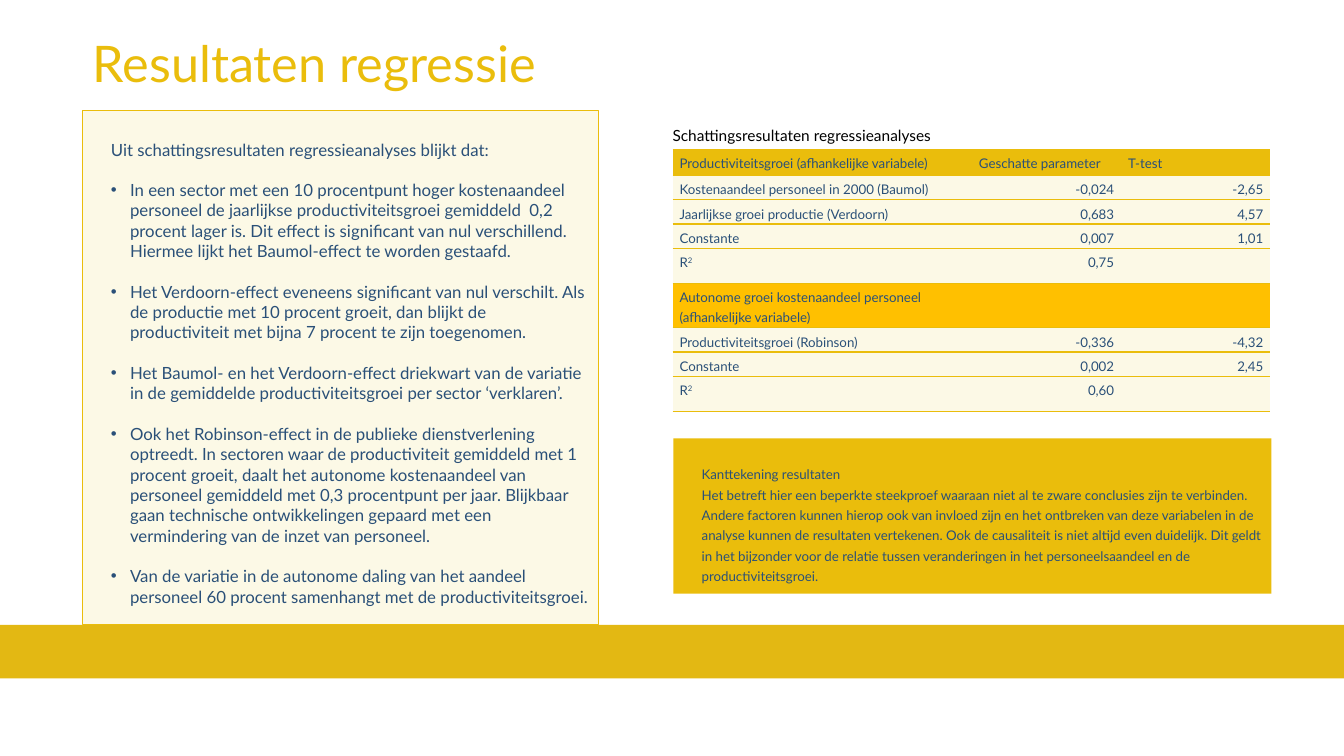
from lxml import etree
from pptx import Presentation
from pptx import util as u
from pptx.dml.color import RGBColor
from pptx.enum import shapes, text
from pptx.oxml.ns import qn

# Content
TITLE = "Resultaten regressie"
INTRO = "Uit schattingsresultaten regressieanalyses blijkt dat:"
FINDINGS = [
    "In een sector met een 10 procentpunt hoger kostenaandeel personeel de jaarlijkse "
    "productiviteitsgroei gemiddeld  0,2 procent lager is. Dit effect is significant van nul "
    "verschillend. Hiermee lijkt het Baumol-effect te worden gestaafd.",
    "Het Verdoorn-effect eveneens significant van nul verschilt. Als de productie met 10 procent "
    "groeit, dan blijkt de productiviteit met bijna 7 procent te zijn toegenomen.",
    "Het Baumol- en het Verdoorn-effect driekwart van de variatie in de gemiddelde "
    "productiviteitsgroei per sector ‘verklaren’.",
    "Ook het Robinson-effect in de publieke dienstverlening optreedt. In sectoren waar de "
    "productiviteit gemiddeld met 1 procent groeit, daalt het autonome kostenaandeel van personeel "
    "gemiddeld met 0,3 procentpunt per jaar. Blijkbaar gaan technische ontwikkelingen gepaard met "
    "een vermindering van de inzet van personeel.",
    "Van de variatie in de autonome daling van het aandeel personeel 60 procent samenhangt met de "
    "productiviteitsgroei.",
]
CAPTION = "Schattingsresultaten regressieanalyses"
# Row kind, then the cells
RESULTS = [
    ("header", "Productiviteitsgroei (afhankelijke variabele)", "Geschatte parameter", "T-test"),
    ("data", "Kostenaandeel personeel in 2000 (Baumol)", "-0,024", "-2,65"),
    ("data", "Jaarlijkse groei productie (Verdoorn)", "0,683", "4,57"),
    ("data", "Constante", "0,007", "1,01"),
    ("data", "R²", "0,75", ""),
    ("group", "Autonome groei kostenaandeel personeel\n(afhankelijke variabele)", "", ""),
    ("data", "Productiviteitsgroei (Robinson)", "-0,336", "-4,32"),
    ("data", "Constante", "0,002", "2,45"),
    ("data", "R²", "0,60", ""),
]
NOTE_HEAD = "Kanttekening resultaten"
NOTE = (
    "Het betreft hier een beperkte steekproef waaraan niet al te zware conclusies zijn te "
    "verbinden. Andere factoren kunnen hierop ook van invloed zijn en het ontbreken van deze "
    "variabelen in de analyse kunnen de resultaten vertekenen. Ook de causaliteit is niet altijd "
    "even duidelijk. Dit geldt in het bijzonder voor de relatie tussen veranderingen in het "
    "personeelsaandeel en de productiviteitsgroei."
)


class Theme:
    font = "Lato"
    gold, band, cream, amber = "EABD0C", "E3B813", "FCF9E6", "FFC000"
    ink, black = "2A5078", "000000"
    title, body, caption, small = 36, 12, 11, 9.5
    leading = u.Pt(14.5)


ROW_FILL = {"header": Theme.gold, "data": Theme.cream, "group": Theme.amber}
ROW_HEIGHT = {"header": 0.26, "data": 0.24, "group": 0.44}
COLUMN_WIDTHS = (2.97, 1.48, 1.48)


def add_span(para, words, size, colour=Theme.ink):
    span = para.add_run()
    span.text = words
    span.font.name = Theme.font
    span.font.size = u.Pt(size)
    span.font.color.rgb = RGBColor.from_string(colour)
    return span


def set_insets(frame, left, top, right, bottom):
    frame.margin_left, frame.margin_top = u.Inches(left), u.Inches(top)
    frame.margin_right, frame.margin_bottom = u.Inches(right), u.Inches(bottom)


def next_para(frame, first):
    para = frame.paragraphs[0] if first else frame.add_paragraph()
    para.alignment = text.PP_ALIGN.LEFT
    para.line_spacing = Theme.leading
    return para


def add_panel(page, left, top, width, height, fill, line=None):
    panel = page.shapes.add_shape(
        shapes.MSO_SHAPE.RECTANGLE, *map(u.Inches, (left, top, width, height)))
    panel.shadow.inherit = False
    panel.fill.solid()
    panel.fill.fore_color.rgb = RGBColor.from_string(fill)
    if line:
        panel.line.color.rgb = RGBColor.from_string(line)
        panel.line.width = u.Pt(0.75)
    else:
        panel.line.fill.background()
    panel.text_frame.word_wrap = True
    panel.text_frame.vertical_anchor = text.MSO_ANCHOR.TOP
    return panel


def add_bullet(para):
    props = para._p.get_or_add_pPr()
    indent = u.Inches(0.19)
    props.set("marL", str(indent))
    props.set("indent", str(-indent))
    etree.SubElement(props, qn("a:buFont")).set("typeface", "Arial")
    etree.SubElement(props, qn("a:buChar")).set("char", "•")


def set_borders(cell):
    """Gold rules above and below the cell, none at its sides."""
    props = cell._tc.get_or_add_tcPr()
    for side in ("L", "R", "T", "B"):
        edge = etree.SubElement(props, qn("a:ln" + side))
        if side in "LR":
            etree.SubElement(edge, qn("a:noFill"))
        else:
            edge.set("w", str(u.Pt(1)))
            fill = etree.SubElement(edge, qn("a:solidFill"))
            etree.SubElement(fill, qn("a:srgbClr")).set("val", Theme.gold)


def fill_cell(cell, words, kind, column):
    set_borders(cell)
    cell.fill.solid()
    cell.fill.fore_color.rgb = RGBColor.from_string(ROW_FILL[kind])
    set_insets(cell, 0.07, 0.02, 0.07, 0.02)
    for index, line in enumerate(words.split("\n")):
        para = next_para(cell.text_frame, index == 0)
        if kind == "data" and column > 0:
            para.alignment = text.PP_ALIGN.RIGHT
        if line:
            add_span(para, line.rstrip("²"), Theme.small)
        if line.endswith("²"):
            power = add_span(para, "2", Theme.small)
            power._r.get_or_add_rPr().set("baseline", "30000")


def add_results(page):
    heights = [ROW_HEIGHT[kind] for kind, *_ in RESULTS]
    frame = page.shapes.add_table(
        len(RESULTS), len(COLUMN_WIDTHS), u.Inches(6.67), u.Inches(1.48),
        u.Inches(sum(COLUMN_WIDTHS)), u.Inches(sum(heights)))
    table = frame.table
    table.first_row = table.horz_banding = False
    for column, width in zip(table.columns, COLUMN_WIDTHS):
        column.width = u.Inches(width)
    for index, (kind, *cells) in enumerate(RESULTS):
        table.rows[index].height = u.Inches(heights[index])
        for column, words in enumerate(cells):
            fill_cell(table.cell(index, column), words, kind, column)


def main():
    deck = Presentation()
    deck.slide_width, deck.slide_height = u.Inches(13.33), u.Inches(7.5)
    page = deck.slides.add_slide(deck.slide_layouts[5])

    # Footer band
    add_panel(page, 0, 6.2, 13.33, 0.53, Theme.band)

    # Title
    title = page.shapes.title
    title.left, title.top = u.Inches(0.82), u.Inches(0.27)
    title.width, title.height = u.Inches(4.64), u.Inches(0.71)
    title.text_frame.word_wrap = False
    title.text_frame.auto_size = text.MSO_AUTO_SIZE.NONE
    title.text_frame.vertical_anchor = text.MSO_ANCHOR.TOP
    para = title.text_frame.paragraphs[0]
    para.alignment = text.PP_ALIGN.LEFT
    add_span(para, TITLE, Theme.title, Theme.gold)

    # Findings
    box = add_panel(page, 0.82, 1.1, 5.12, 5.1, Theme.cream, Theme.gold).text_frame
    set_insets(box, 0.28, 0.28, 0.1, 0.2)
    add_span(next_para(box, True), INTRO, Theme.body)
    for finding in FINDINGS:
        para = next_para(box, False)
        para.space_before = Theme.leading
        add_bullet(para)
        add_span(para, finding, Theme.body)

    # Regression table with caption
    add_results(page)
    box = page.shapes.add_textbox(*map(u.Inches, (6.67, 1.18, 5.95, 0.3))).text_frame
    box.word_wrap = True
    set_insets(box, 0, 0.05, 0.1, 0.05)
    add_span(next_para(box, True), CAPTION, Theme.caption, Theme.black)

    # Side note
    box = add_panel(page, 6.68, 4.35, 5.93, 1.54, Theme.gold).text_frame
    set_insets(box, 0.28, 0.28, 0.1, 0.28)
    head = next_para(box, True)
    head.line_spacing = 1.0
    add_span(head, NOTE_HEAD, Theme.small)
    add_span(next_para(box, False), NOTE, Theme.small)

    deck.save("out.pptx")


if __name__ == "__main__":
    main()
